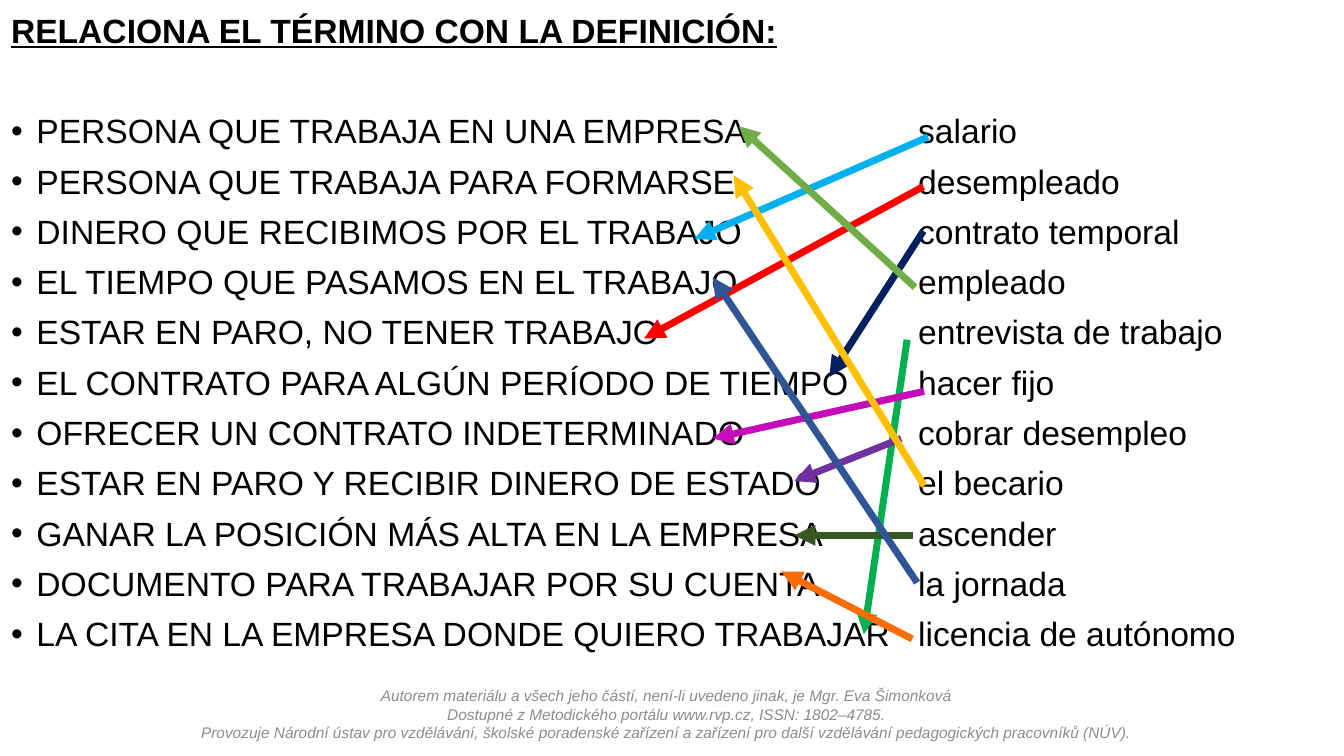
"""Build a Spanish vocabulary slide that matches definitions with work terms."""
from dataclasses import dataclass

from lxml import etree
from pptx import Presentation
from pptx.dml.color import RGBColor
from pptx.enum import shapes, text
from pptx.oxml import ns
from pptx.util import Cm, Pt


@dataclass(frozen=True)
class Theme:
    font: str = "Arial"
    ink: str = "000000"
    muted: str = "8C8C8C"
    body_size: int = 24
    credit_size: int = 11
    arrow_width: int = 5
    sky: str = "00B0F0"
    red: str = "FF0000"
    navy: str = "002060"
    leaf: str = "70AD47"
    green: str = "00B050"
    magenta: str = "C60CB9"
    purple: str = "7030A0"
    gold: str = "FFC000"
    orange: str = "F76C03"
    forest: str = "385723"
    blue: str = "2F5597"


theme = Theme()


def add_text_frame(page, left, top, width, height):
    frame = page.shapes.add_textbox(Cm(left), Cm(top), Cm(width), Cm(height)).text_frame
    frame.word_wrap = True
    return frame


def style_font(para, size, color):
    para.font.name = theme.font
    para.font.size = Pt(size)
    para.font.color.rgb = RGBColor.from_string(color)


TITLE = "RELACIONA EL TÉRMINO CON LA DEFINICIÓN:"
ENTRIES = [
    "PERSONA QUE TRABAJA EN UNA EMPRESA\t\tsalario",
    "PERSONA QUE TRABAJA PARA FORMARSE\t\tdesempleado",
    "DINERO QUE RECIBIMOS POR EL TRABAJO\t\tcontrato temporal",
    "EL TIEMPO QUE PASAMOS EN EL TRABAJO\t\templeado",
    "ESTAR EN PARO, NO TENER TRABAJO\t\t\tentrevista de trabajo",
    "EL CONTRATO PARA ALGÚN PERÍODO DE TIEMPO\thacer fijo",
    "OFRECER UN CONTRATO INDETERMINADO\t\tcobrar desempleo",
    "ESTAR EN PARO Y RECIBIR DINERO DE ESTADO\tel becario",
    "GANAR LA POSICIÓN MÁS ALTA EN LA EMPRESA\tascender",
    "DOCUMENTO PARA TRABAJAR POR SU CUENTA\tla jornada",
    "LA CITA EN LA EMPRESA DONDE QUIERO TRABAJAR\tlicencia de autónomo",
]
CREDIT = (
    "Autorem materiálu a všech jeho částí, není-li uvedeno jinak, je Mgr. Eva Šimonková\v"
    "Dostupné z\u00a0Metodického portálu www.rvp.cz, ISSN: 1802–4785.\v"
    "Provozuje Národní ústav pro vzdělávání, školské poradenské zařízení a zařízení "
    "pro další vzdělávání pedagogických pracovníků (NÚV)."
)
ARROWS = [
    (theme.sky, 23.39, 3.45, 17.5, 6.02),
    (theme.red, 23.27, 4.7, 16.23, 8.53),
    (theme.navy, 23.27, 5.82, 20.9, 9.5),
    (theme.leaf, 23.06, 7.24, 18.62, 3.18),
    (theme.green, 22.86, 8.56, 21.77, 15.98),
    (theme.magenta, 23.29, 9.86, 17.96, 11.05),
    (theme.purple, 22.71, 11.05, 20.02, 12.12),
    (theme.gold, 23.29, 12.24, 18.49, 4.42),
    (theme.orange, 22.99, 16.1, 19.69, 14.4),
    (theme.forest, 23.01, 13.49, 20.02, 13.49),
    (theme.blue, 23.11, 14.68, 17.96, 6.99),
]

deck = Presentation()
deck.slide_width, deck.slide_height = Cm(33.87), Cm(19.05)
page = deck.slides.add_slide(deck.slide_layouts[6])

credit = add_text_frame(page, 1.09, 17.17, 31.42, 1.68).paragraphs[0]
credit.text = CREDIT
credit.alignment = text.PP_ALIGN.CENTER
credit.font.italic = True
style_font(credit, theme.credit_size, theme.muted)

matching = add_text_frame(page, 0.03, 0.23, 33.53, 16.61)
heading = matching.paragraphs[0]
heading.text = TITLE
heading.line_spacing = 0.9
heading.font.bold = heading.font.underline = True
style_font(heading, theme.body_size, theme.ink)

for row, entry in enumerate(ENTRIES):
    para = matching.add_paragraph()
    para.text = entry
    para.line_spacing = 0.9
    para.space_before = Pt(10 if row else 46)
    style_font(para, theme.body_size, theme.ink)
    props = para._p.get_or_add_pPr()
    props.set("marL", str(Cm(0.64)))
    props.set("indent", str(Cm(-0.64)))
    props.set("defTabSz", str(Cm(2.54)))
    bullet_font = etree.Element(ns.qn("a:buFont"), typeface=theme.font)
    bullet = etree.Element(ns.qn("a:buChar"), char="•")
    props.find(ns.qn("a:defRPr")).addprevious(bullet_font)
    bullet_font.addnext(bullet)

for color, *ends in ARROWS:
    arrow = page.shapes.add_connector(shapes.MSO_CONNECTOR.STRAIGHT, *map(Cm, ends))
    arrow.line.color.rgb = RGBColor.from_string(color)
    arrow.line.width = Pt(theme.arrow_width)
    etree.SubElement(arrow.line._get_or_add_ln(), ns.qn("a:tailEnd"), type="triangle")
    etree.SubElement(arrow._element.spPr, ns.qn("a:effectLst"))

deck.save("out.pptx")
